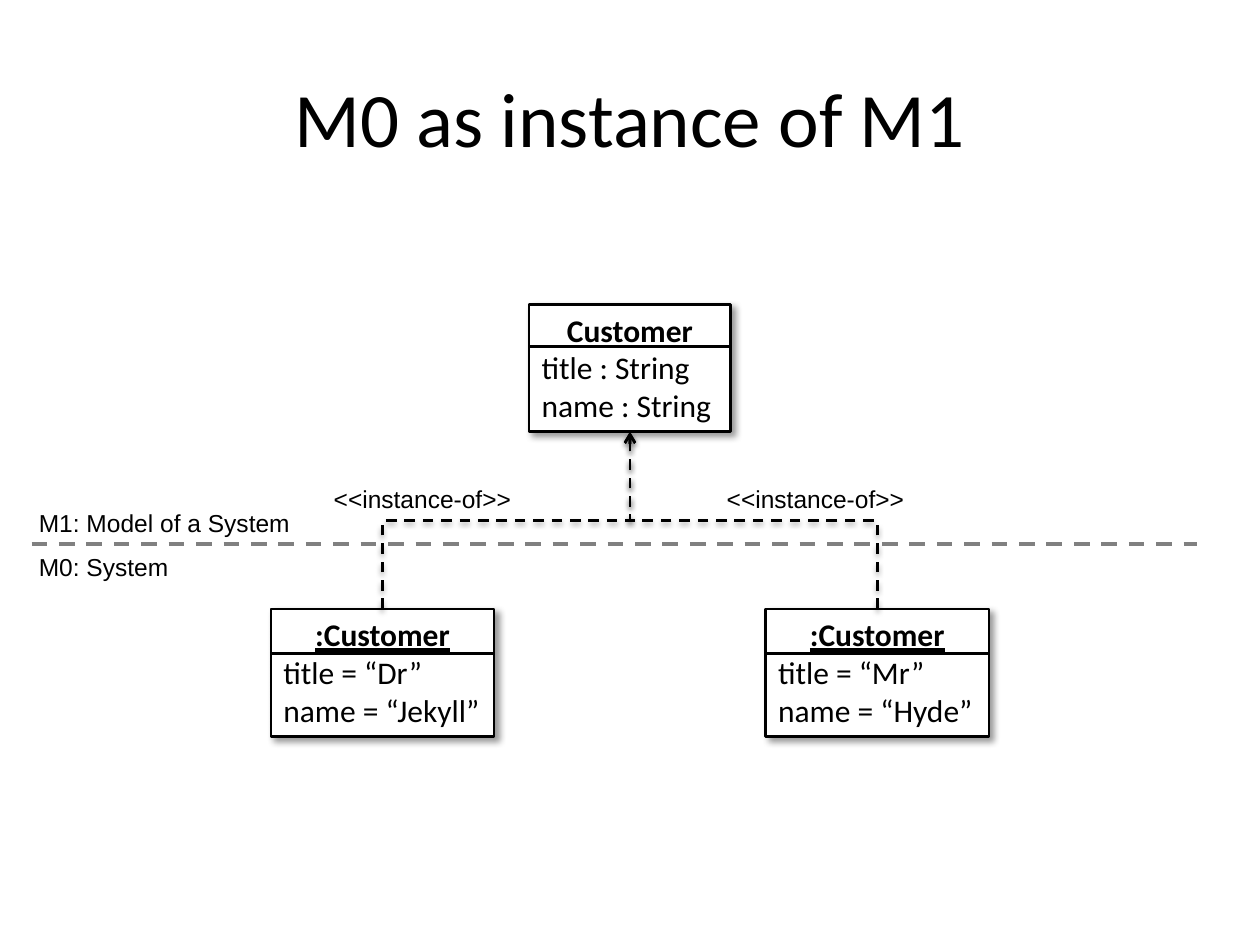
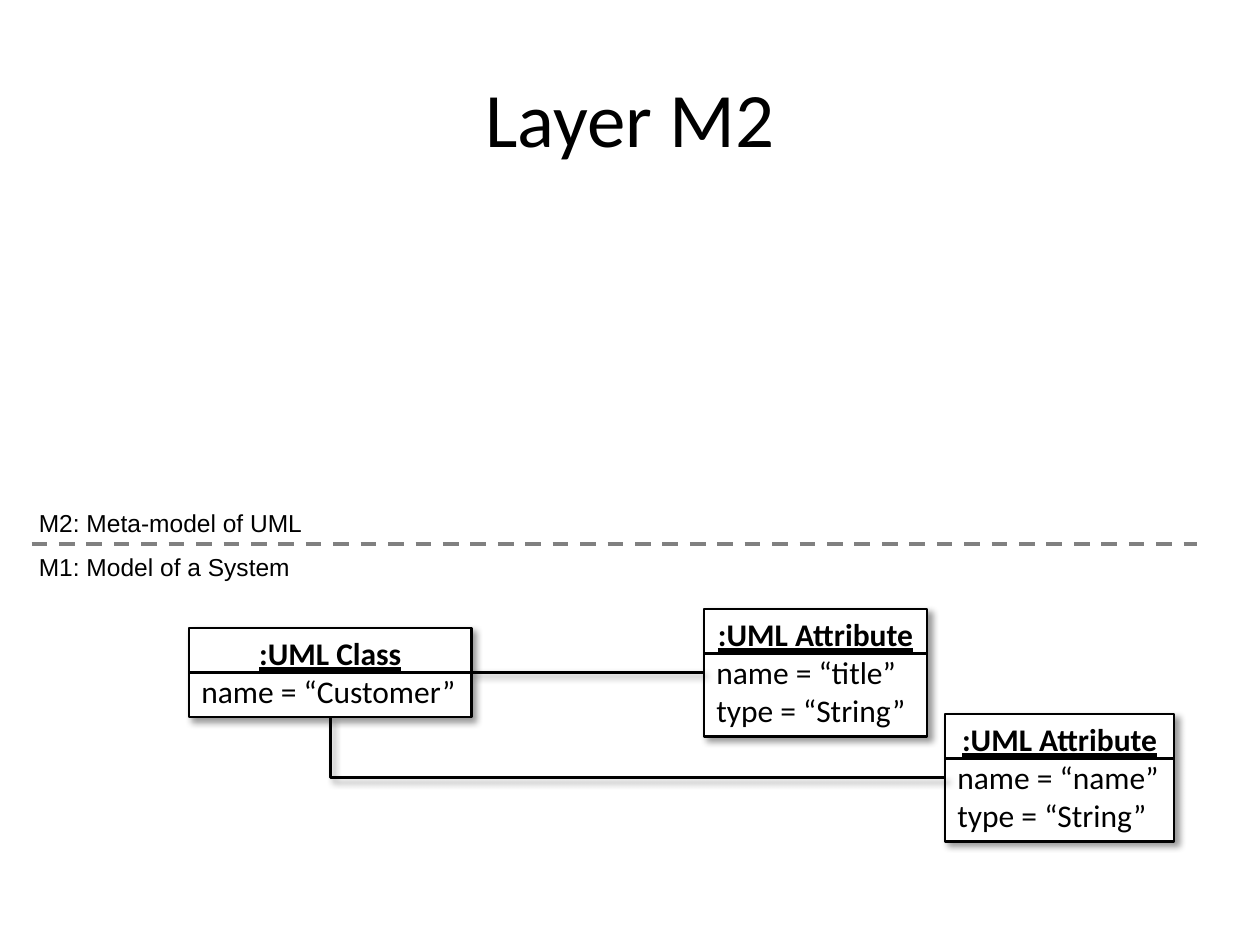
from lxml.etree import SubElement
from pptx import Presentation
from pptx.dml.color import RGBColor
from pptx.enum.dml import MSO_LINE
from pptx.enum.shapes import MSO_CONNECTOR as Connector, MSO_SHAPE as Preset
from pptx.enum.text import MSO_ANCHOR as Anchor, MSO_AUTO_SIZE as AutoSize, PP_ALIGN as Align
from pptx.oxml.ns import qn
from pptx.util import Pt

BLACK, WHITE, GRAY = "000000", "FFFFFF", "808080"
HEADING_FONT, LABEL_FONT = "Calibri", "Arial"
BOX_SHADOW = {"alpha": 40, "blur": 4, "distance": 3, "angle": 45}
ARROW_SHADOW = {"alpha": 38, "blur": 3.1, "distance": 1.6, "angle": 90}

BOUNDARY_Y = 311
LABEL_X, LABEL_HEIGHT = 15.1, 24.2
LINE_HEIGHT, BOX_MARGIN = 21.8, 7.4

# Box: left, top, width, height of the name part, name, underlined, attributes
# Link: source box, target box, kind
SLIDES = [
    {
        "title": "M0 as instance of M1",
        "layers": [("M1: Model of a System", 158.4), ("M0: System", 89.3)],
        "boxes": {
            "class": (302.4, 174, 115.2, 23.9, "Customer", False,
                      ["title : String", "name : String"]),
            "jekyll": (154.8, 348, 127.6, 25.6, ":Customer", True,
                       ["title = “Dr”", "name = “Jekyll”"]),
            "hyde": (437.5, 348, 127.6, 25.6, ":Customer", True,
                     ["title = “Mr”", "name = “Hyde”"]),
        },
        "links": [("jekyll", "class", "instance"), ("hyde", "class", "instance")],
        "notes": [("<<instance-of>>", 183.6), ("<<instance-of>>", 408.2)],
    },
    {
        "title": "Layer M2",
        "layers": [("M2: Meta-model of UML", 165.6), ("M1: Model of a System", 158.4)],
        "boxes": {
            "class": (108, 358.8, 161.5, 25.6, ":UML Class", True,
                      ["name = “Customer”"]),
            "title": (402.2, 348, 127.6, 25.6, ":UML Attribute", True,
                      ["name = “title”", "type = “String”"]),
            "name": (540, 408, 131, 25.6, ":UML Attribute", True,
                     ["name = “name”", "type = “String”"]),
        },
        "links": [("class", "title", "straight"), ("class", "name", "corner")],
        "notes": [],
    },
]


def color(value):
    return RGBColor.from_string(value)


def set_shadow(shape, shadow):
    """Give the shape an outer shadow, or an empty effect list for None."""
    effects = SubElement(shape._element.spPr, qn("a:effectLst"))
    if shadow:
        outer = SubElement(effects, qn("a:outerShdw"), {
            "blurRad": str(Pt(shadow["blur"])), "dist": str(Pt(shadow["distance"])),
            "dir": str(shadow["angle"] * 60000), "algn": "tl", "rotWithShape": "0"})
        fill = SubElement(outer, qn("a:srgbClr"), val=BLACK)
        SubElement(fill, qn("a:alpha"), val=str(shadow["alpha"] * 1000))


def write(paragraph, text, size=18, font=HEADING_FONT, align=Align.LEFT,
          bold=False, underline=False):
    paragraph.alignment = align
    run = paragraph.add_run()
    run.text = text
    run.font.name, run.font.size = font, Pt(size)
    run.font.bold, run.font.underline = bold, underline
    run.font.color.rgb = color(BLACK)


def fit_to_text(frame):
    frame.word_wrap = False
    frame.auto_size = AutoSize.SHAPE_TO_FIT_TEXT


def add_title(slide, text):
    frame = slide.shapes.add_textbox(Pt(36), Pt(21.6), Pt(648), Pt(90)).text_frame
    frame.word_wrap = True
    frame.vertical_anchor = Anchor.MIDDLE
    write(frame.paragraphs[0], text, size=44, align=Align.CENTER)


def add_label(slide, text, left, top, width):
    box = slide.shapes.add_textbox(Pt(left), Pt(top), Pt(width), Pt(LABEL_HEIGHT))
    fit_to_text(box.text_frame)
    write(box.text_frame.paragraphs[0], text, size=14, font=LABEL_FONT)


def add_line(shapes, start, end, kind=Connector.STRAIGHT, line_color=BLACK, width=1.5,
             dashed=False, arrow=False, shadow=None):
    connector = shapes.add_connector(kind, *(Pt(value) for value in (*start, *end)))
    connector.line.color.rgb = color(line_color)
    connector.line.width = Pt(width)
    if dashed:
        connector.line.dash_style = MSO_LINE.DASH
    if arrow:
        SubElement(connector.line._get_or_add_ln(), qn("a:tailEnd"), type="arrow")
    set_shadow(connector, shadow)
    return connector


def add_elbow(shapes, start, end, preset, **line_format):
    """Add a bent connector that leaves its start vertically."""
    connector = add_line(shapes, start, end, kind=Connector.ELBOW, **line_format)
    (x1, y1), (x2, y2) = start, end
    width, height = abs(y2 - y1), abs(x2 - x1)
    connector.left, connector.top = Pt((x1 + x2 - width) / 2), Pt((y1 + y2 - height) / 2)
    connector.width, connector.height = Pt(width), Pt(height)
    right, up = x2 > x1, y2 < y1
    transform = connector._element.spPr.find(qn("a:xfrm"))
    transform.set("rot", str((90 if right == up else 270) * 60000))
    transform.set("flipH", str(int(right)))
    transform.set("flipV", str(int(up)))
    connector._element.spPr.find(qn("a:prstGeom")).set("prst", preset)


def box_height(attributes):
    return (len(attributes) + 1) * LINE_HEIGHT + BOX_MARGIN


def add_uml_box(slide, left, top, width, name_height, name, underlined, attributes):
    shapes = slide.shapes.add_group_shape().shapes
    box = shapes.add_shape(Preset.RECTANGLE, Pt(left), Pt(top), Pt(width),
                           Pt(box_height(attributes)))
    box.fill.solid()
    box.fill.fore_color.rgb = color(WHITE)
    box.line.color.rgb = color(BLACK)
    box.line.width = Pt(1.5)
    set_shadow(box, BOX_SHADOW)
    frame = box.text_frame
    frame.vertical_anchor = Anchor.TOP
    fit_to_text(frame)
    write(frame.paragraphs[0], name, align=Align.CENTER, bold=True, underline=underlined)
    for attribute in attributes:
        write(frame.add_paragraph(), attribute)
    divider_y = top + name_height
    add_line(shapes, (left, divider_y), (left + width, divider_y))


def add_link(slide, source, target, kind):
    left, top, width, *_, attributes = source
    target_left, target_top, target_width, *_, target_attributes = target
    height, target_height = box_height(attributes), box_height(target_attributes)
    middle = left + width / 2
    target_middle_y = target_top + target_height / 2
    if kind == "instance":
        add_elbow(slide.shapes, (middle, top),
                  (target_left + target_width / 2, target_top + target_height),
                  "bentConnector3", dashed=True, arrow=True, shadow=ARROW_SHADOW)
    elif kind == "corner":
        add_elbow(slide.shapes, (middle, top + height), (target_left, target_middle_y),
                  "bentConnector2", shadow=BOX_SHADOW)
    else:
        add_line(slide.shapes, (left + width, target_middle_y),
                 (target_left, target_middle_y), shadow=BOX_SHADOW)


def add_layers(slide, layers):
    """Draw the boundary with the upper and lower layer names."""
    add_line(slide.shapes, (18, BOUNDARY_Y), (684, BOUNDARY_Y), line_color=GRAY,
             width=2.25, dashed=True)
    for (text, width), top in zip(layers, (BOUNDARY_Y - 24.4, BOUNDARY_Y + 0.8)):
        add_label(slide, text, LABEL_X, top, width)


def main():
    presentation = Presentation()
    presentation.slide_width, presentation.slide_height = Pt(720), Pt(540)
    for content in SLIDES:
        slide = presentation.slides.add_slide(presentation.slide_layouts[6])
        add_title(slide, content["title"])
        boxes = content["boxes"]
        for box in boxes.values():
            add_uml_box(slide, *box)
        for source, target, kind in content["links"]:
            add_link(slide, boxes[source], boxes[target], kind)
        for text, left in content["notes"]:
            add_label(slide, text, left, 272.9, 115.9)
        add_layers(slide, content["layers"])
    presentation.save("out.pptx")


if __name__ == "__main__":
    main()
